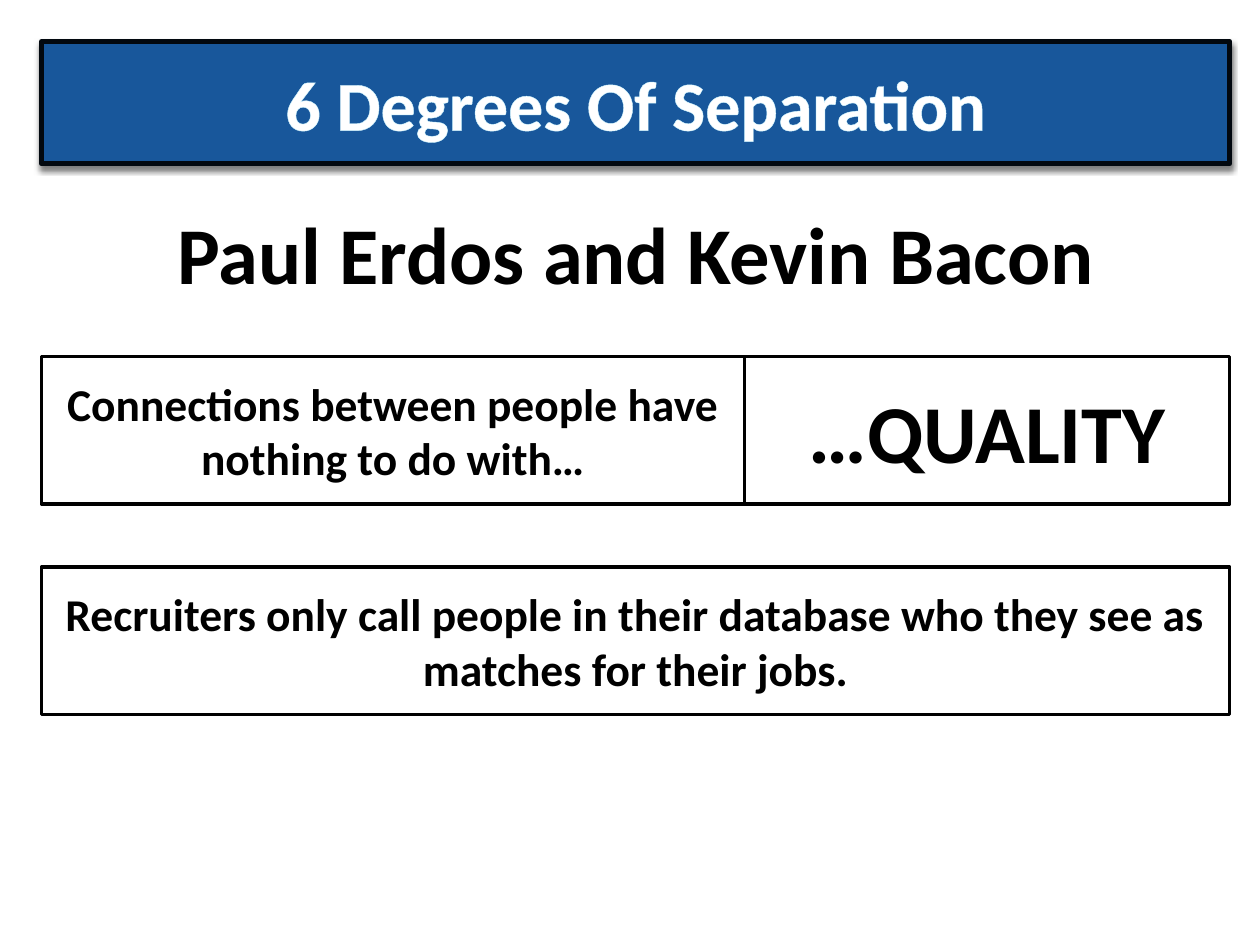
from lxml import etree
from pptx import Presentation
from pptx.dml.color import RGBColor
from pptx.enum.shapes import MSO_SHAPE as SHAPE
from pptx.enum.text import MSO_ANCHOR as ANCHOR, MSO_AUTO_SIZE as AUTO, PP_ALIGN as ALIGN
from pptx.oxml import parse_xml
from pptx.oxml.ns import nsdecls, qn
from pptx.util import Inches, Pt

BLUE = RGBColor(0x18, 0x57, 0x9B)
NAVY = RGBColor(0x02, 0x08, 0x0F)
ICE = RGBColor(0xCC, 0xF2, 0xFD)
WHITE = RGBColor(0xFF, 0xFF, 0xFF)
BLACK = RGBColor(0x00, 0x00, 0x00)

LEFT, WIDTH = 0.33, 9.43
SPLIT = 5.58
BOX_H = 1.17


def write_text(sp, text, size=26, color=BLACK, font="Calibri", bold=True):
    tf = sp.text_frame
    tf.word_wrap = True
    tf.auto_size = AUTO.NONE
    tf.vertical_anchor = ANCHOR.MIDDLE
    p = tf.paragraphs[0]
    p.alignment = ALIGN.CENTER
    r = p.add_run()
    r.text = text
    r.font.name = font
    r.font.size = Pt(size)
    r.font.bold = bold
    r.font.color.rgb = color
    return r


class SlideBuilder:
    def __init__(self, prs):
        self.s = prs.slides.add_slide(prs.slide_layouts[5])

    def paint(self, sp, fill, line, width):
        sp.fill.solid()
        sp.fill.fore_color.rgb = fill
        if line is None:
            sp.line.fill.background()
        else:
            sp.line.color.rgb = line
            sp.line.width = Pt(width)

    def title(self, text, x, y, w, h):
        sp = self.s.shapes.title
        sp.left, sp.top, sp.width, sp.height = map(Inches, (x, y, w, h))
        self.paint(sp, BLUE, NAVY, 3)
        sp._element.spPr.append(parse_xml(
            f'<a:effectLst {nsdecls("a")}>'
            f'<a:outerShdw blurRad="{Pt(3)}" dist="{Pt(2)}" dir="5400000" rotWithShape="0">'
            '<a:srgbClr val="000000"><a:alpha val="50000"/></a:srgbClr>'
            '</a:outerShdw></a:effectLst>'))
        r = write_text(sp, text, size=40, color=WHITE)
        ln = etree.Element(qn("a:ln"), w=str(Pt(1)))
        fill = etree.SubElement(ln, qn("a:solidFill"))
        etree.SubElement(fill, qn("a:srgbClr"), val=str(ICE))
        r.font._element.insert(0, ln)

    def box(self, text, x, y, w, h, line=BLACK, **style):
        sp = self.s.shapes.add_shape(SHAPE.RECTANGLE, *map(Inches, (x, y, w, h)))
        sp.shadow.inherit = False
        self.paint(sp, WHITE, line, 2)
        write_text(sp, text, **style)


def main():
    prs = Presentation()
    prs.slide_width, prs.slide_height = Inches(10), Inches(7.5)
    b = SlideBuilder(prs)
    b.title("6 Degrees Of Separation", LEFT, 0.33, WIDTH, 0.97)
    b.box("Paul Erdos and Kevin Bacon", LEFT, 1.67, WIDTH, 0.67, line=None, size=46)
    b.box("Connections between people have nothing to do with…",
          LEFT, 2.83, SPLIT, BOX_H)
    b.box("…QUALITY", LEFT + SPLIT, 2.83, WIDTH - SPLIT, BOX_H, size=47)
    b.box("Recruiters only call people in their database who they see as "
          "matches for their jobs.", LEFT, 4.5, WIDTH, BOX_H)
    prs.save("out.pptx")


if __name__ == "__main__":
    main()
